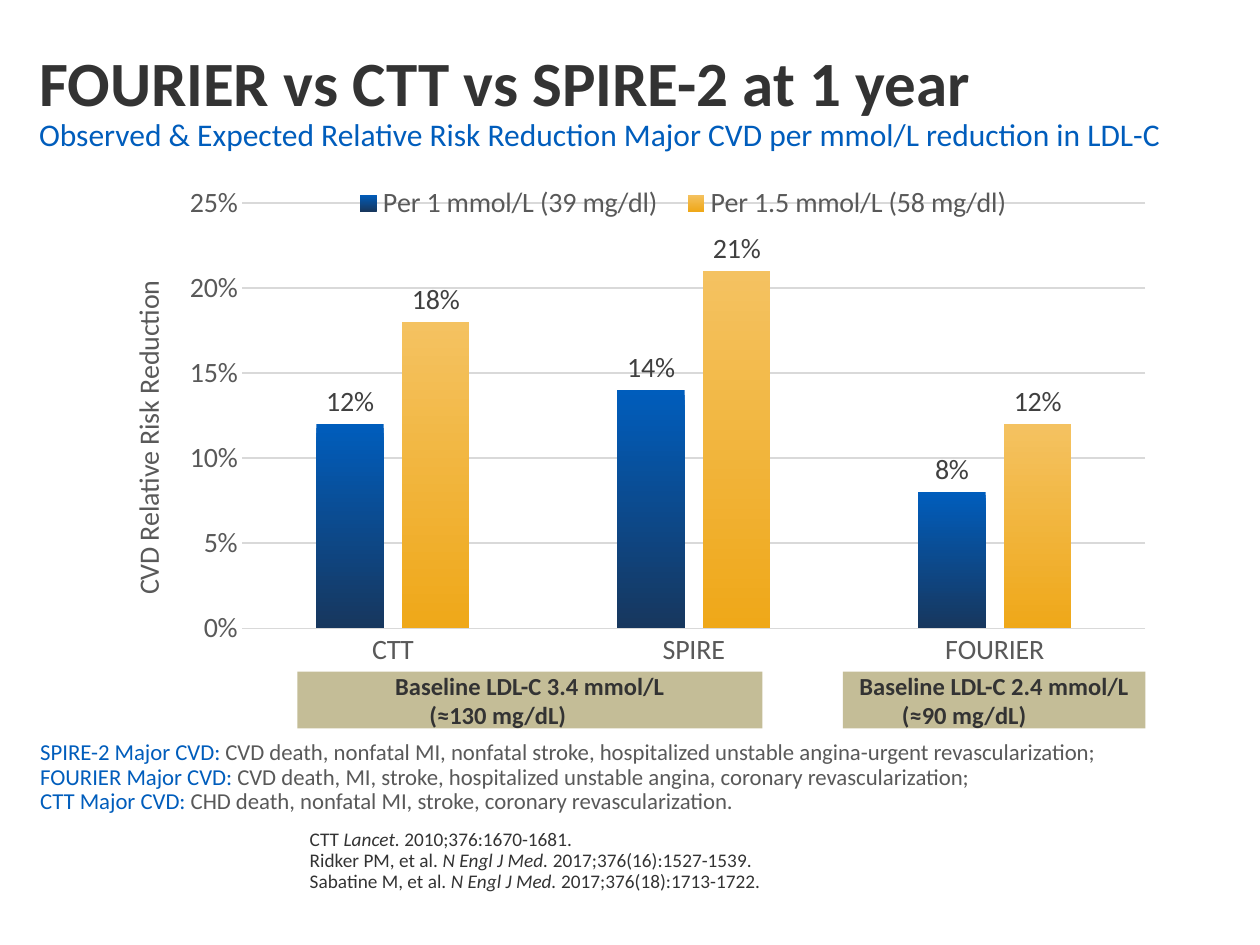
from dataclasses import dataclass

from pptx import Presentation
from pptx.chart.data import CategoryChartData as Data
from pptx.dml.color import RGBColor as Rgb
from pptx.enum.chart import XL_CHART_TYPE as Kind
from pptx.enum.chart import XL_LABEL_POSITION as Spot
from pptx.enum.chart import XL_LEGEND_POSITION as Side
from pptx.enum.chart import XL_TICK_MARK as Tick
from pptx.enum.shapes import MSO_SHAPE as Form
from pptx.enum.text import MSO_ANCHOR as Anchor
from pptx.enum.text import PP_ALIGN as Align
from pptx.oxml import parse_xml
from pptx.oxml.ns import nsdecls
from pptx.util import Inches, Pt


@dataclass(frozen=True)
class Theme:
    face: str = "Calibri"
    ink: str = "333333"
    blue: str = "005DBC"
    gray: str = "595959"
    label: str = "404040"
    rule: str = "D9D9D9"
    tan: str = "C4BD97"
    fades: tuple = (("005DBC", "17375E"), ("F4C261", "EFA819"))
    head: int = 36
    sub: int = 18
    axis: int = 16
    band: int = 14
    note: int = 13
    cite: int = 11


def place(node, index, x, y, w=None, h=None, inner=False):
    for old in node.findall(node.tag.split("}")[0] + "}layout"):
        node.remove(old)
    target = '<c:layoutTarget val="inner"/>' if inner else ""
    modes = '<c:xMode val="edge"/><c:yMode val="edge"/>'
    sizes = zip("xywh", (x, y, w, h))
    spots = "".join(f'<c:{k} val="{v}"/>' for k, v in sizes if v is not None)
    node.insert(index, parse_xml(
        f'<c:layout {nsdecls("c")}><c:manualLayout>{target}{modes}{spots}'
        "</c:manualLayout></c:layout>"))


class Deck:
    def __init__(self, theme):
        self.theme = theme
        self.file = Presentation()
        self.file.slide_width, self.file.slide_height = Inches(10), Inches(7.5)
        self.slide = self.file.slides.add_slide(self.file.slide_layouts[5])

    def area(self, x, y, w, h):
        wide, high = self.file.slide_width, self.file.slide_height
        return [int(part * full / 100) for part, full in
                ((x, wide), (y, high), (w, wide), (h, high))]

    def style(self, font, size, color, bold=False, slant=False):
        font.name, font.size, font.bold, font.italic = self.theme.face, Pt(size), bold, slant
        font.color.rgb = Rgb.from_string(color)

    def fill(self, para, lines):
        para.alignment, para.line_spacing, para.space_before = Align.LEFT, 0.9, Pt(0)
        for row, line in enumerate(lines):
            if row:
                para.add_line_break()
            for text, *look in line:
                run = para.add_run()
                run.text = text
                self.style(run.font, *look)

    def title(self, area, lines):
        shape = self.slide.shapes.title
        shape.left, shape.top, shape.width, shape.height = self.area(*area)
        shape.text_frame.vertical_anchor = Anchor.MIDDLE
        self.fill(shape.text_frame.paragraphs[0], lines)

    def text(self, area, paras):
        frame = self.slide.shapes.add_textbox(*self.area(*area)).text_frame
        frame.word_wrap = True
        for row, lines in enumerate(paras):
            self.fill(frame.add_paragraph() if row else frame.paragraphs[0], lines)

    def band(self, area, top, low, indent):
        shape = self.slide.shapes.add_shape(Form.RECTANGLE, *self.area(*area))
        shape.shadow.inherit = False
        shape.fill.solid()
        shape.fill.fore_color.rgb = Rgb.from_string(self.theme.tan)
        shape.line.fill.background()
        frame = shape.text_frame
        frame.word_wrap, frame.vertical_anchor = True, Anchor.MIDDLE
        frame.text = f"{top}\n{low}"
        first, last = frame.paragraphs
        first.alignment, last.alignment = Align.CENTER, Align.LEFT
        last._p.get_or_add_pPr().set("marL", str(Inches(indent)))
        for para in frame.paragraphs:
            self.style(para.runs[0].font, self.theme.band, self.theme.ink, True)

    def chart(self, area, cats, series, label):
        look = self.theme
        data = Data(number_format="0%")
        data.categories = cats
        for name, vals in series:
            data.add_series(name, vals)
        chart = self.slide.shapes.add_chart(
            Kind.COLUMN_CLUSTERED, *self.area(*area), data).chart
        self.style(chart.font, look.axis, look.gray)
        chart.has_title = False
        chart.has_legend = True
        chart.legend.position = Side.BOTTOM
        chart.legend.include_in_layout = False
        self.style(chart.legend.font, look.axis, look.gray)
        self.axes(chart, label)
        plot = chart.plots[0]
        plot.gap_width, plot.overlap, plot.vary_by_categories = 219, -27, False
        for item, fade in zip(plot.series, look.fades):
            self.bars(item, fade)
        place(chart._chartSpace.chart.plotArea, 0, 0.14, 0.05, 0.84, 0.76, True)
        place(chart.legend._element, 1, 0.23, 0.01, 0.64, 0.08)
        place(chart.value_axis.axis_title._element, 1, 0.03, 0.18)

    def axes(self, chart, label):
        look = self.theme
        base, scale = chart.category_axis, chart.value_axis
        scale.minimum_scale, scale.maximum_scale, scale.major_unit = 0, 0.25, 0.05
        scale.has_major_gridlines = True
        for line in (base.format.line, scale.major_gridlines.format.line):
            line.color.rgb, line.width = Rgb.from_string(look.rule), Pt(0.75)
        scale.format.line.fill.background()
        for axis in (base, scale):
            axis.major_tick_mark = axis.minor_tick_mark = Tick.NONE
            self.style(axis.tick_labels.font, look.axis, look.gray)
        scale.tick_labels.number_format = "0%"
        scale.tick_labels.number_format_is_linked = False
        frame = scale.axis_title.text_frame
        frame.text = label
        self.style(frame.paragraphs[0].runs[0].font, look.axis, look.gray)

    def bars(self, item, fade):
        fill = item.format.fill
        fill.gradient()
        fill.gradient_angle = 270
        for stop, color in zip(fill.gradient_stops, fade):
            stop.color.rgb = Rgb.from_string(color)
        item.invert_if_negative = False
        tags = item.data_labels
        tags.show_value, tags.position = True, Spot.OUTSIDE_END
        tags.number_format, tags.number_format_is_linked = "0%", False
        self.style(tags.font, self.theme.axis, self.theme.label)


def main():
    look = Theme()
    deck = Deck(look)
    deck.title((2.1, 2.53, 95.8, 16.67), [
        [("FOURIER vs CTT vs SPIRE-2 at 1 year", look.head, look.ink, True)],
        [("Observed & Expected Relative Risk Reduction Major CVD per mmol/L reduction in LDL-C",
          look.sub, look.blue)]])
    cites = [("CTT ", "Lancet.", " 2010;376:1670-1681."),
             ("Ridker PM, et al. ", "N Engl J Med.", " 2017;376(16):1527-1539."),
             ("Sabatine M, et al. ", "N Engl J Med.", " 2017;376(18):1713-1722.")]
    deck.text((23.6, 87.2, 74.3, 12), [
        [[(part, look.cite, look.ink, False, spot == 1) for spot, part in enumerate(cite)]]
        for cite in cites])
    terms = [("SPIRE-2", "CVD death, nonfatal MI, nonfatal stroke, hospitalized unstable "
              "angina-urgent revascularization;"),
             ("FOURIER", "CVD death, MI, stroke, hospitalized unstable angina, "
              "coronary revascularization;"),
             ("CTT", "CHD death, nonfatal MI, stroke, coronary revascularization.")]
    deck.text((2.2, 77.73, 95.8, 8.67), [[
        [(f"{name} Major CVD: ", look.note, look.blue), (gist, look.note, look.gray)]
        for name, gist in terms]])
    deck.chart((7.3, 18.53, 85.3, 59.2), ("CTT", "SPIRE", "FOURIER"), [
        ("Per 1 mmol/L (39 mg/dl)", (0.12, 0.14, 0.08)),
        ("Per 1.5 mmol/L (58 mg/dl)", (0.18, 0.21, 0.12))], "CVD Relative Risk Reduction")
    for left, wide, rate, dose, indent in ((23.6, 36.9, 3.4, 130, 0.95),
                                           (66.9, 24, 2.4, 90, 0.37)):
        deck.band((left, 71.07, wide, 6), f"Baseline LDL-C {rate} mmol/L",
                  f"(≈{dose} mg/dL)", indent)
    deck.file.save("out.pptx")


if __name__ == "__main__":
    main()
